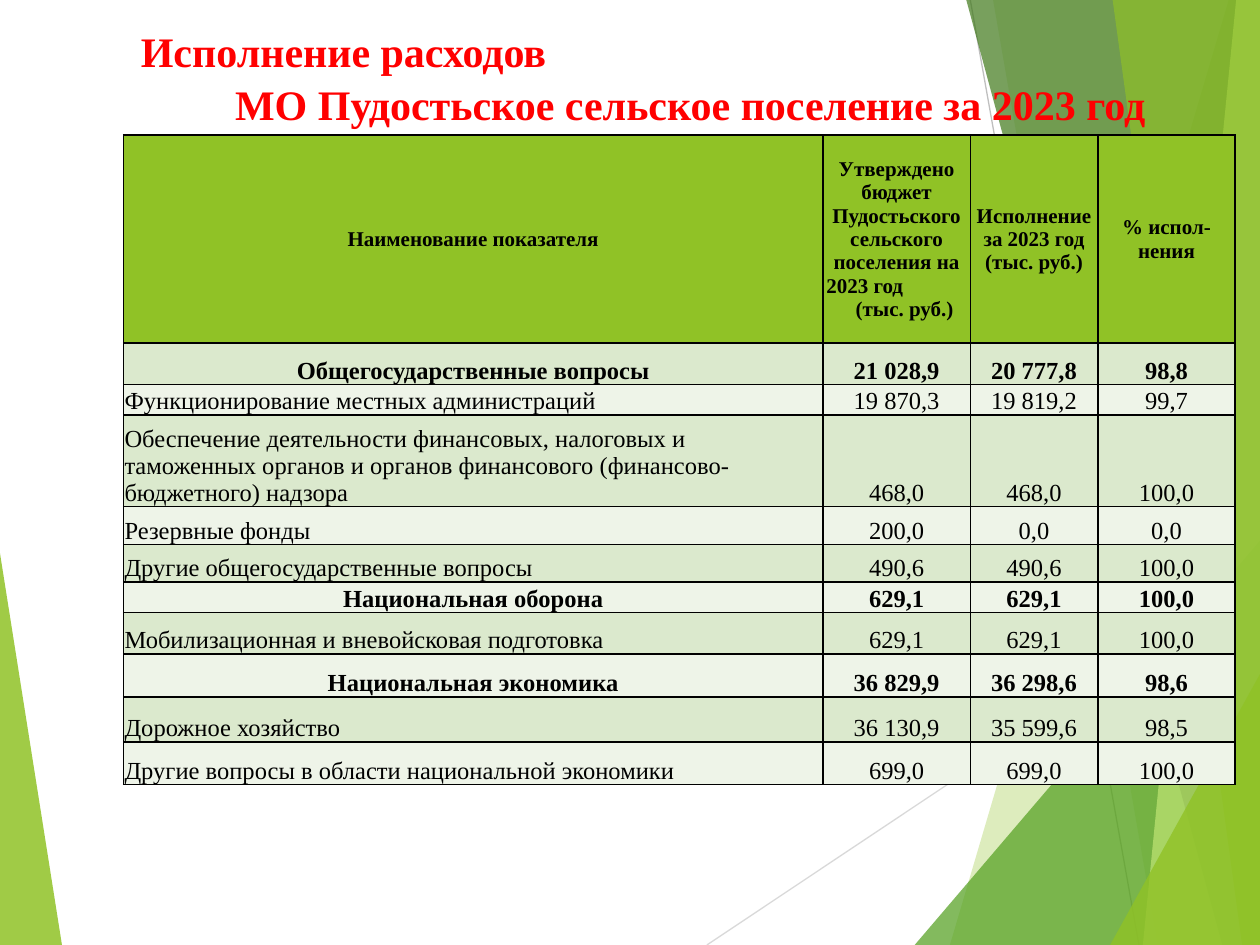
from lxml import etree
from pptx import Presentation
from pptx.dml.color import RGBColor
from pptx.enum.shapes import MSO_CONNECTOR
from pptx.enum.text import MSO_ANCHOR, PP_ALIGN
from pptx.oxml.ns import qn
from pptx.util import Cm, Pt

LEFT, MID = PP_ALIGN.LEFT, PP_ALIGN.CENTER
CENTER, LOW = MSO_ANCHOR.MIDDLE, MSO_ANCHOR.BOTTOM
LINE = MSO_CONNECTOR.STRAIGHT

FONT = "Times New Roman"
COLORS = {
    "lime": "90C226", "leaf": "54A021", "dark": "3F7819", "pale": "C0E474",
    "red": "FF0000", "black": "000000", "band": "DBE9CD", "light": "EEF4E8",
    "gray": "BFBFBF", "mist": "D9D9D9",
}

WIDTH, HEIGHT = 25.4, 19.05

# Edge x, start x, start y, foot x, colour, opacity in percent
FACETS = [
    (0, 0, 11.15, 1.25, "lime", 85),
    (WIDTH, 24.77, 0, 19.15, "lime", 30),
    (WIDTH, 20.02, 0, 23.34, "lime", 20),
    (WIDTH, WIDTH, 10.9, 18.44, "leaf", 72),
    (WIDTH, 19.48, 0, 24.64, "dark", 70),
    (WIDTH, 24.92, 0, 23.04, "pale", 70),
    (WIDTH, 22.43, 0, 25.04, "lime", 65),
    (WIDTH, WIDTH, 13.59, 22.38, "lime", 80),
]
RAYS = [
    (14.25, HEIGHT, WIDTH, 11.61, "mist"),
    (19.56, 0, 22.96, HEIGHT, "gray"),
]

COLS = [14.1, 2.97, 2.57, 2.77]
HEAD = 4.19
# Row height, is a section, name, approved, spent, percent
ROWS = [
    (0.84, True, "Общегосударственные вопросы", "21 028,9", "20 777,8", "98,8"),
    (0.61, False, "Функционирование местных администраций",
     "19 870,3", "19 819,2", "99,7"),
    (1.85, False, "Обеспечение деятельности финансовых, налоговых и таможенных "
     "органов и органов финансового (финансово-бюджетного) надзора",
     "468,0", "468,0", "100,0"),
    (0.76, False, "Резервные фонды", "200,0", "0,0", "0,0"),
    (0.76, False, "Другие общегосударственные вопросы", "490,6", "490,6", "100,0"),
    (0.61, True, "Национальная оборона", "629,1", "629,1", "100,0"),
    (0.84, False, "Мобилизационная и вневойсковая подготовка",
     "629,1", "629,1", "100,0"),
    (0.86, True, "Национальная экономика", "36 829,9", "36 298,6", "98,6"),
    (0.91, False, "Дорожное хозяйство", "36 130,9", "35 599,6", "98,5"),
    (0.86, False, "Другие вопросы в области национальной экономики",
     "699,0", "699,0", "100,0"),
]


def rgb(name):
    return RGBColor.from_string(COLORS[name])


def write(frame, text, size=14, bold=False, color="black", align=MID,
          indent=0, gap=0, first=True):
    """Write one paragraph into a text frame."""
    para = frame.paragraphs[0] if first else frame.add_paragraph()
    para.alignment = align
    if indent:
        para._p.get_or_add_pPr().set("marL", str(Cm(indent)))
    if gap:
        para.space_before = Pt(gap)
    run = para.add_run()
    run.text = text
    font = run.font
    font.name, font.size, font.bold = FONT, Pt(size), bold
    font.color.rgb = rgb(color)


def add_facet(slide, box, facet):
    left, top, _, height = box
    edge, x, y, foot, color, alpha = facet
    points = [(x, y), (foot, height), (edge, height), (edge, y)]
    spots = [(Cm(left + px), Cm(top + py)) for px, py in points]
    path = slide.shapes.build_freeform(*spots[0])
    path.add_line_segments(spots[1:], close=True)
    shape = path.convert_to_shape()
    shape.shadow.inherit = False
    shape.line.fill.background()
    shape.fill.solid()
    shape.fill.fore_color.rgb = rgb(color)
    tint = shape._element.spPr.find(qn("a:solidFill"))[0]
    etree.SubElement(tint, qn("a:alpha")).set("val", str(alpha * 1000))


def add_decor(slide, box):
    """Thin rays and translucent facets behind the content."""
    left, top = box[:2]
    for x1, y1, x2, y2, color in RAYS:
        ray = slide.shapes.add_connector(
            LINE, Cm(left + x1), Cm(top + y1), Cm(left + x2), Cm(top + y2))
        ray.line.color.rgb = rgb(color)
        ray.line.width = Pt(0.75)
        etree.SubElement(ray._element.spPr, qn("a:effectLst"))
    for facet in FACETS:
        add_facet(slide, box, facet)


def add_title(slide, box):
    frame = slide.shapes.add_textbox(*map(Cm, box)).text_frame
    frame.word_wrap = True
    frame.vertical_anchor = LOW
    look = dict(size=24, bold=True, color="red", align=LEFT)
    write(frame, "Исполнение расходов", indent=0.1, **look)
    write(frame, "МО Пудостьское сельское поселение за 2023 год",
          indent=2, gap=1.5, first=False, **look)


def style_cell(cell, fill, anchor):
    cell.margin_left = cell.margin_right = cell.margin_top = Cm(0.02)
    cell.margin_bottom = 0
    cell.vertical_anchor = anchor
    props = cell._tc.get_or_add_tcPr()
    for side in ("lnL", "lnR", "lnT", "lnB"):
        line = etree.SubElement(props, qn("a:" + side), w=str(Pt(1)))
        paint = etree.SubElement(line, qn("a:solidFill"))
        etree.SubElement(paint, qn("a:srgbClr"), val=COLORS["black"])
    cell.fill.solid()
    cell.fill.fore_color.rgb = rgb(fill)


def add_budget(slide, box):
    table = slide.shapes.add_table(
        len(ROWS) + 1, len(COLS), *map(Cm, box)).table
    table.first_row = table.horz_banding = False
    for col, width in zip(table.columns, COLS):
        col.width = Cm(width)
    for row, height in zip(table.rows, [HEAD] + [row[0] for row in ROWS]):
        row.height = Cm(height)

    # Header row
    heads = [
        [("Наименование показателя", {})],
        [("Утверждено бюджет Пудостьского сельского поселения на", {}),
         ("2023 год", {"align": LEFT, "indent": 0.05}),
         ("(тыс. руб.)", {"indent": 0.32})],
        [("Исполнение за 2023 год (тыс. руб.)", {})],
        [("% испол-нения", {})],
    ]
    for c, parts in enumerate(heads):
        cell = table.cell(0, c)
        style_cell(cell, "lime", CENTER)
        for i, (text, look) in enumerate(parts):
            write(cell.text_frame, text, size=12, bold=True, first=i == 0, **look)

    # Budget lines
    for r, (_, section, *texts) in enumerate(ROWS, 1):
        for c, text in enumerate(texts):
            cell = table.cell(r, c)
            style_cell(cell, "band" if r % 2 else "light", LOW)
            write(cell.text_frame, text, bold=section,
                  align=MID if section or c else LEFT)


def main():
    deck = Presentation()
    deck.slide_width, deck.slide_height = Cm(WIDTH), Cm(HEIGHT)
    slide = deck.slides.add_slide(deck.slide_layouts[6])
    add_decor(slide, (0, 0, WIDTH, HEIGHT))
    add_title(slide, (2.49, 0.33, 22.4, 2.39))
    add_budget(slide, (2.49, 2.72, sum(COLS), HEAD + sum(row[0] for row in ROWS)))
    deck.save("out.pptx")


if __name__ == "__main__":
    main()
